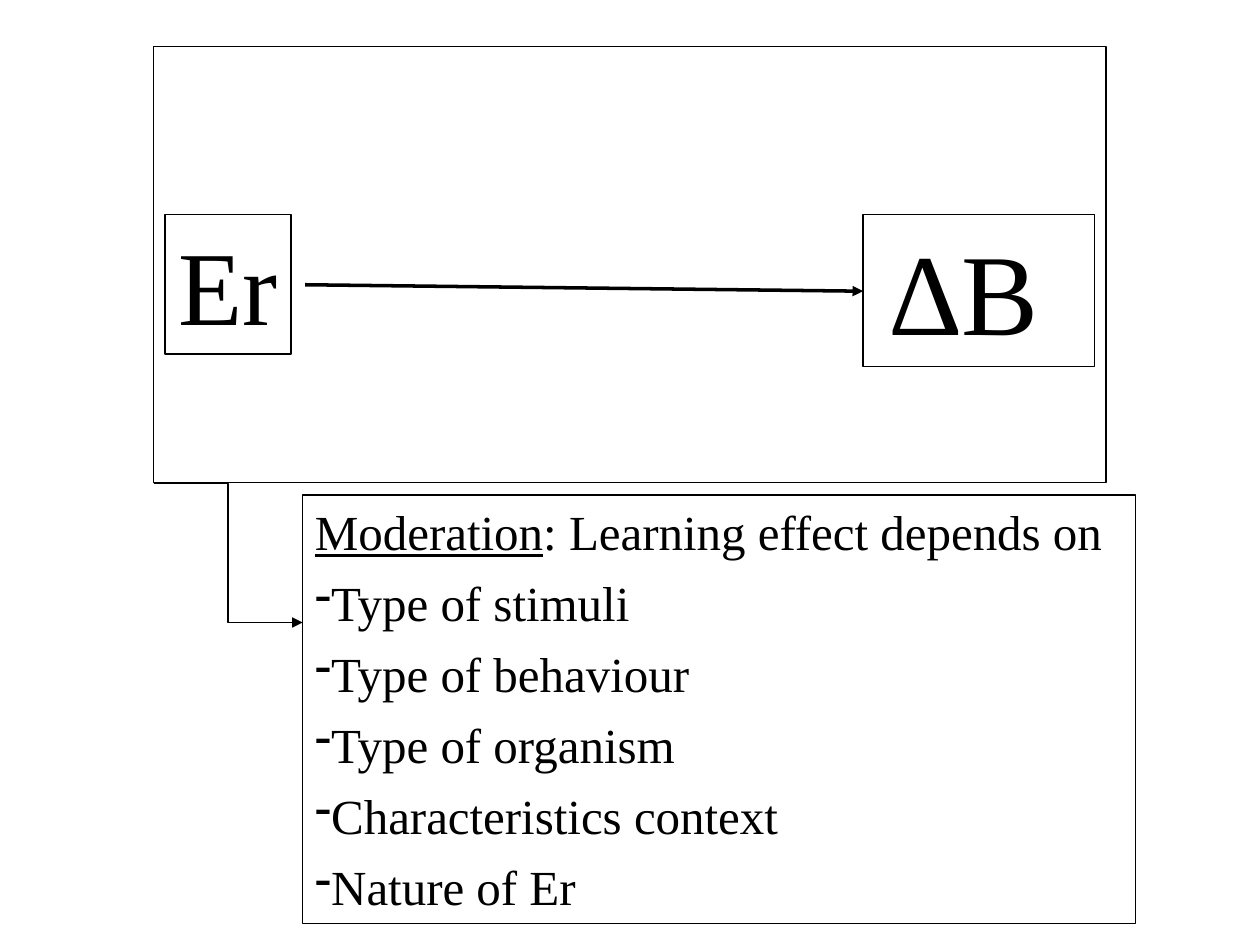
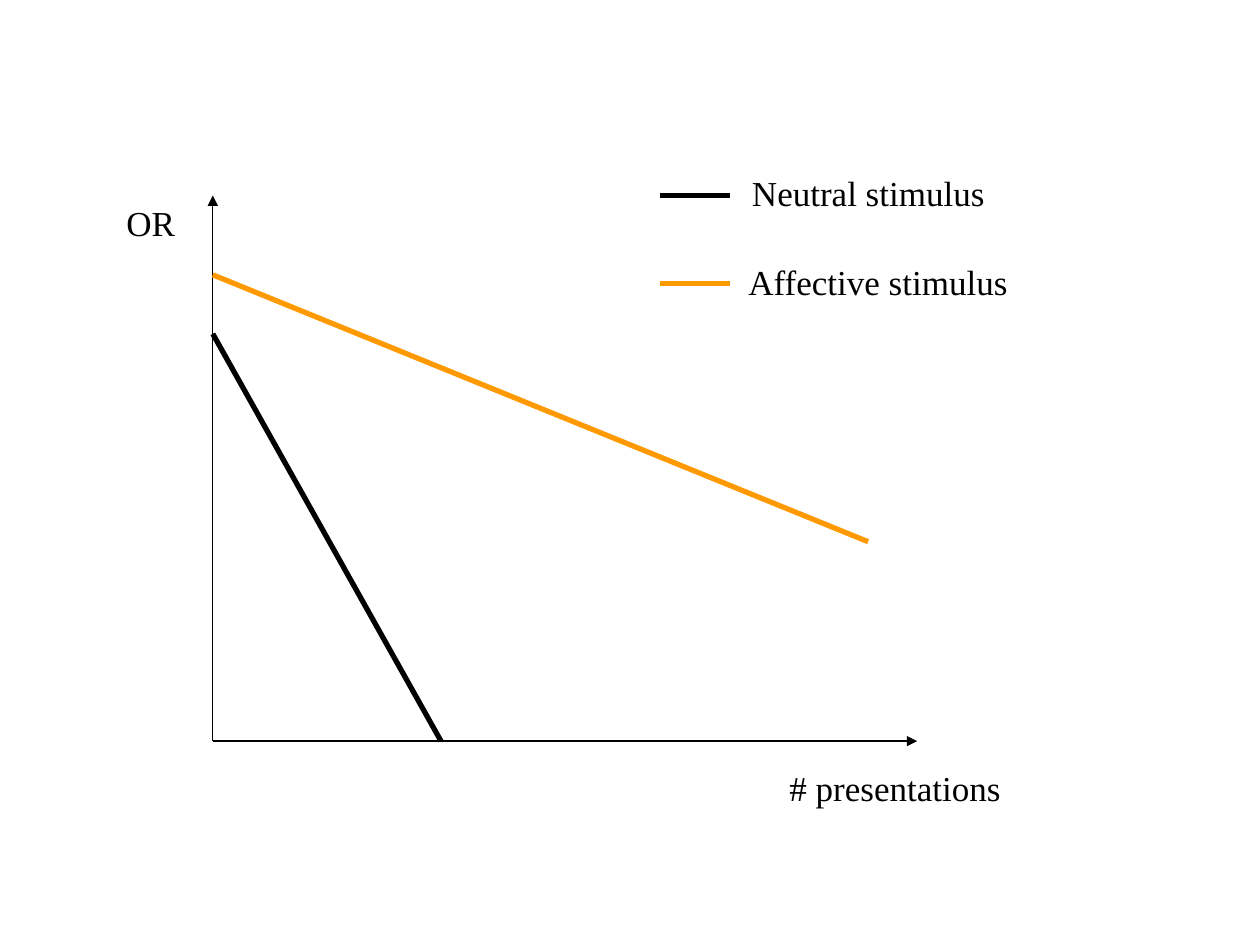
from typing import NamedTuple

from lxml.etree import SubElement
from pptx import Presentation
from pptx.dml.color import RGBColor
from pptx.enum.shapes import MSO_CONNECTOR as Link, MSO_SHAPE as Preset
from pptx.enum.text import MSO_ANCHOR as Anchor, PP_ALIGN as Align
from pptx.oxml.ns import qn
from pptx.util import Cm, Pt

BLACK = RGBColor(0x00, 0x00, 0x00)
ORANGE = RGBColor(0xFF, 0x99, 0x00)
FONT = "Times New Roman"
THIN, MEDIUM, THICK = 0.75, 2, 3
LABEL_HEIGHT = 1.09
ORIGIN_X, ORIGIN_Y = 4.29, 14.94
AXIS_TOP, AXIS_RIGHT = 3.94, 18.49
KEY_LEFT, KEY_RIGHT = 13.31, 14.71
MODERATORS = [
    "Type of stimuli",
    "Type of behaviour",
    "Type of organism",
    "Characteristics context",
    "Nature of Er",
]


class Frame(NamedTuple):
    left: float
    top: float
    width: float
    height: float
    text: str = ""
    size: float = 20
    align: Align = Align.CENTER
    anchor: Anchor = Anchor.TOP


class Stroke(NamedTuple):
    x1: float
    y1: float
    x2: float
    y2: float
    width: float = THIN
    color: RGBColor = BLACK
    arrow: bool = False
    kind: Link = Link.STRAIGHT


def format_span(span, size: float) -> None:
    span.font.name = FONT
    span.font.size = Pt(size)
    span.font.color.rgb = BLACK


def fill_text(shape, frame: Frame) -> None:
    text_frame = shape.text_frame
    text_frame.word_wrap = True
    text_frame.vertical_anchor = frame.anchor
    text_frame.text = frame.text
    for para in text_frame.paragraphs:
        para.alignment = frame.align
        for span in para.runs:
            format_span(span, frame.size)


def bounds(frame: Frame) -> list[Cm]:
    return [Cm(length) for length in frame[:4]]


def add_label(page, frame: Frame) -> None:
    fill_text(page.shapes.add_textbox(*bounds(frame)), frame)


def add_box(page, frame: Frame):
    box = page.shapes.add_shape(Preset.RECTANGLE, *bounds(frame))
    box.shadow.inherit = False
    box.fill.background()
    box.line.color.rgb = BLACK
    box.line.width = Pt(THIN)
    if frame.text:
        fill_text(box, frame)
    return box


def add_stroke(page, stroke: Stroke) -> None:
    ends = [Cm(length) for length in stroke[:4]]
    connector = page.shapes.add_connector(stroke.kind, *ends)
    connector.line.color.rgb = stroke.color
    connector.line.width = Pt(stroke.width)
    if stroke.arrow:
        SubElement(connector.line._get_or_add_ln(), qn("a:tailEnd"), type="triangle")
    SubElement(connector._element.spPr, qn("a:effectLst"))


def add_dash(para) -> None:
    properties = para._p.get_or_add_pPr()
    properties.set("marL", "0")
    properties.set("indent", str(Cm(-0.48)))
    SubElement(properties, qn("a:buChar"), char="-")


def add_moderation(page) -> None:
    text = "\n".join(["Moderation", *MODERATORS])
    box = add_box(page, Frame(6.1, 9.98, 16.79, 8.64, text, 28, Align.LEFT))
    heading, *items = box.text_frame.paragraphs
    heading.space_before = Pt(3)
    heading.runs[0].font.underline = True
    ending = heading.add_run()
    ending.text = ": Learning effect depends on"
    format_span(ending, 28)
    for para in items:
        para.space_before = Pt(7)
        add_dash(para)


def build_moderation_page(page) -> None:
    add_box(page, Frame(3.33, 4.32, 2.54, 2.82, "Er ", 60))
    add_box(page, Frame(17.4, 4.32, 4.67, 3.07, "∆B ", 66))
    add_stroke(page, Stroke(6.15, 5.74, 17.4, 5.87, MEDIUM, arrow=True))
    add_box(page, Frame(3.1, 0.94, 19.2, 8.79))
    add_stroke(page, Stroke(3.1, 9.75, 6.1, 12.55, arrow=True, kind=Link.ELBOW))
    add_moderation(page)


def build_habituation_page(page) -> None:
    strokes = [
        Stroke(ORIGIN_X, ORIGIN_Y, ORIGIN_X, AXIS_TOP, arrow=True),
        Stroke(ORIGIN_X, ORIGIN_Y, AXIS_RIGHT, ORIGIN_Y, arrow=True),
        Stroke(ORIGIN_X, 6.73, 8.89, ORIGIN_Y, THICK),
        Stroke(ORIGIN_X, 5.54, 17.5, 10.92, THICK, ORANGE),
        Stroke(KEY_LEFT, 3.94, KEY_RIGHT, 3.94, THICK),
        Stroke(KEY_LEFT, 5.72, KEY_RIGHT, 5.72, THICK, ORANGE),
    ]
    labels = [
        Frame(2.29, 3.94, 1.5, LABEL_HEIGHT, "OR "),
        Frame(14.5, 15.32, 7.09, LABEL_HEIGHT, "# presentations"),
        Frame(14.91, 3.33, 6.68, LABEL_HEIGHT, "Neutral stimulus", align=Align.LEFT),
        Frame(14.45, 5.13, 6.68, LABEL_HEIGHT, "Affective stimulus "),
    ]
    for stroke in strokes:
        add_stroke(page, stroke)
    for label in labels:
        add_label(page, label)


def main() -> None:
    deck = Presentation()
    deck.slide_width, deck.slide_height = Cm(25.4), Cm(19.05)
    blank = deck.slide_layouts[6]
    for build in (build_moderation_page, build_habituation_page):
        build(deck.slides.add_slide(blank))
    deck.save("out.pptx")


if __name__ == "__main__":
    main()
